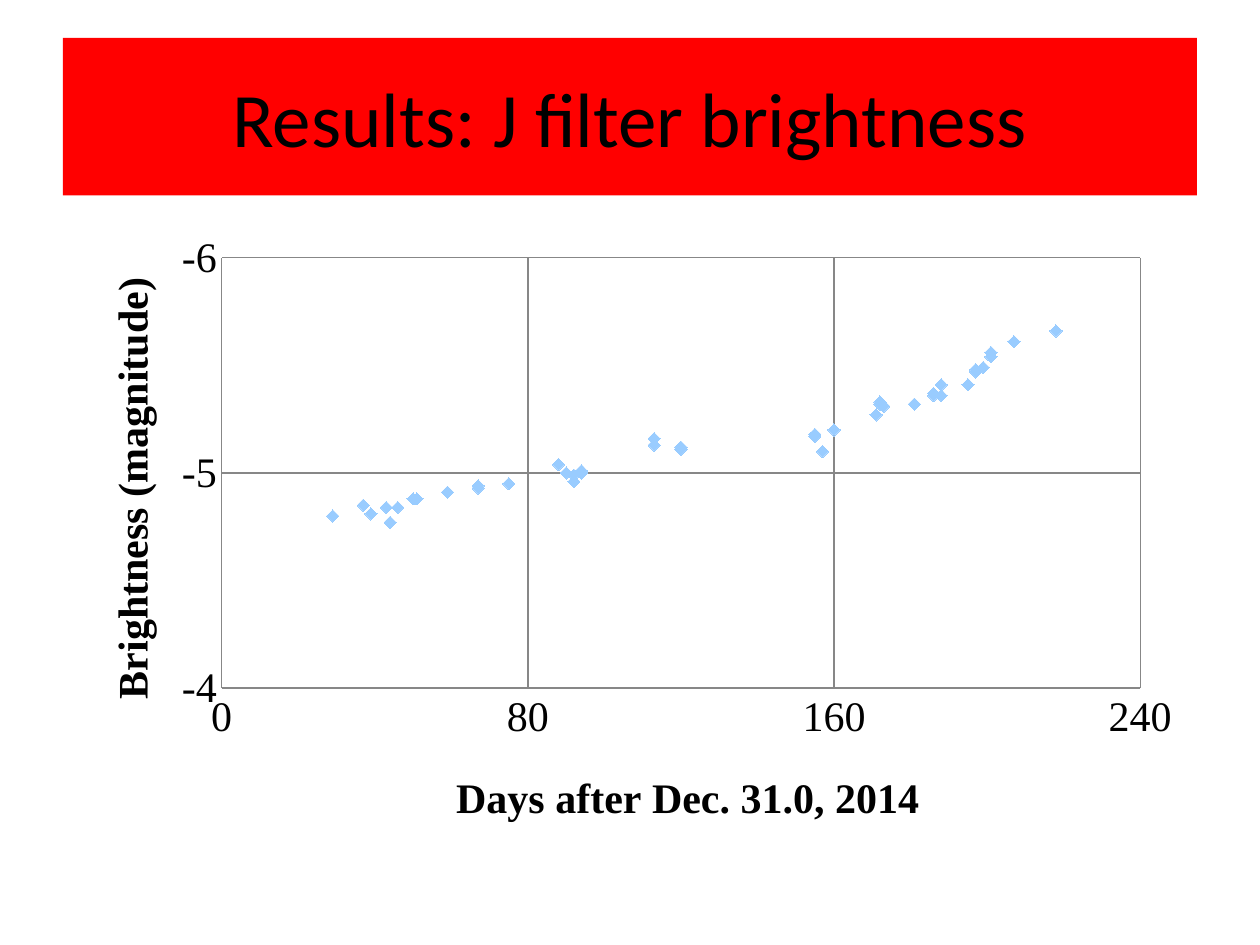
from lxml import etree
from pptx import Presentation
from pptx.chart.data import XyChartData
from pptx.dml.color import RGBColor
from pptx.enum.chart import (XL_AXIS_CROSSES, XL_CHART_TYPE, XL_MARKER_STYLE,
                             XL_TICK_MARK)
from pptx.enum.shapes import MSO_SHAPE
from pptx.enum.text import MSO_ANCHOR, PP_ALIGN
from pptx.oxml.ns import qn
from pptx.util import Inches, Pt

SCATTER = XL_CHART_TYPE.XY_SCATTER
DIAMOND = XL_MARKER_STYLE.DIAMOND
NO_TICK = XL_TICK_MARK.NONE
CROSS_MAX = XL_AXIS_CROSSES.MAXIMUM
RECT = MSO_SHAPE.RECTANGLE
MIDDLE = MSO_ANCHOR.MIDDLE
CENTER = PP_ALIGN.CENTER

COLORS = {"banner": "FF0000", "text": "000000", "grid": "878787", "marker": "99CCFF"}
TITLE_FONT = "Calibri"
AXIS_FONT = "Times New Roman"

DAYS = [29, 37, 39, 43, 44, 46, 50, 51, 59, 67, 67, 75, 88, 90, 92, 92, 94, 94,
        113, 113, 120, 120, 155, 155, 157, 160, 171, 172, 172, 173, 181, 181,
        186, 186, 186, 188, 188, 195, 197, 197, 199, 201, 201, 207, 218]
MAGNITUDES = [-4.8, -4.85, -4.81, -4.84, -4.77, -4.84, -4.88, -4.88, -4.91,
              -4.93, -4.94, -4.95, -5.04, -5, -4.96, -4.99, -5.01, -5, -5.16,
              -5.13, -5.11, -5.12, -5.18, -5.17, -5.1, -5.2, -5.27, -5.33,
              -5.32, -5.31, -5.32, -5.32, -5.37, -5.36, -5.36, -5.41, -5.36,
              -5.41, -5.47, -5.48, -5.49, -5.54, -5.56, -5.61, -5.66]


def rgb(name):
    return RGBColor.from_string(COLORS[name])


def style_font(font, name, size, bold=False):
    font.name, font.size, font.bold = name, Pt(size), bold
    font.color.rgb = rgb("text")


def set_layout(parent, index, inner=False, **fractions):
    """Place a chart part by fractions of the chart area."""
    for old in parent.findall(qn("c:layout")):
        parent.remove(old)
    layout = etree.Element(qn("c:layout"))
    manual = etree.SubElement(layout, qn("c:manualLayout"))
    if inner:
        etree.SubElement(manual, qn("c:layoutTarget")).set("val", "inner")
    for key in ("x", "y"):
        etree.SubElement(manual, qn(f"c:{key}Mode")).set("val", "edge")
    for key, value in fractions.items():
        etree.SubElement(manual, qn(f"c:{key}")).set("val", str(value))
    parent.insert(index, layout)


def add_banner(s, text, x, y, w, h):
    sp = s.shapes.add_shape(RECT, x, y, w, h)
    sp.shadow.inherit = False
    sp.fill.solid()
    sp.fill.fore_color.rgb = rgb("banner")
    sp.line.fill.background()
    tf = sp.text_frame
    tf.text = text
    tf.word_wrap = True
    tf.vertical_anchor = MIDDLE
    p = tf.paragraphs[0]
    p.alignment = CENTER
    style_font(p.runs[0].font, TITLE_FONT, 44)


def style_axis(axis, title, low, high, step, title_x, title_y):
    axis.minimum_scale, axis.maximum_scale, axis.major_unit = low, high, step
    axis.major_tick_mark = axis.minor_tick_mark = NO_TICK
    axis.has_major_gridlines = True
    for line in (axis.format.line, axis.major_gridlines.format.line):
        line.color.rgb = rgb("grid")
        line.width = Pt(0.75)
    axis.tick_labels.number_format = "General"
    axis.tick_labels.number_format_is_linked = False
    style_font(axis.tick_labels.font, AXIS_FONT, 24)
    tf = axis.axis_title.text_frame
    tf.text = title
    style_font(tf.paragraphs[0].runs[0].font, AXIS_FONT, 24, bold=True)
    set_layout(axis.axis_title._element, 1, x=title_x, y=title_y)


def add_brightness_chart(s, x, y, w, h):
    data = XyChartData()
    points = data.add_series("Series 1")
    for day, magnitude in zip(DAYS, MAGNITUDES):
        points.add_data_point(day, magnitude)
    chart = s.shapes.add_chart(SCATTER, x, y, w, h, data).chart
    chart.has_legend = False
    chart.has_title = False
    style_font(chart.font, TITLE_FONT, 10)
    style_axis(chart.category_axis, "Days after Dec. 31.0, 2014", 0, 240, 80, 0.34, 0.87)
    style_axis(chart.value_axis, "Brightness (magnitude)", -6, -4, 1, 0.03, 0.08)
    chart.value_axis.reverse_order = True
    chart.value_axis.crosses = CROSS_MAX
    plot_area = chart._chartSpace.find(".//" + qn("c:plotArea"))
    set_layout(plot_area, 0, inner=True, x=0.14, y=0.06, w=0.81, h=0.69)

    plot = chart.plots[0]
    plot.vary_by_categories = False
    series = plot.series[0]
    series.format.line.fill.background()
    marker = series.marker
    marker.style, marker.size = DIAMOND, 7
    marker.format.fill.solid()
    marker.format.fill.fore_color.rgb = rgb("marker")
    marker.format.line.fill.background()


def main():
    prs = Presentation()
    prs.slide_width, prs.slide_height = Inches(10), Inches(7.5)
    s = prs.slides.add_slide(prs.slide_layouts[6])
    left, width = Inches(0.5), Inches(9)
    add_banner(s, "Results: J filter brightness", left, Inches(0.3), width, Inches(1.25))
    add_brightness_chart(s, left, Inches(1.75), width, Inches(4.95))
    prs.save("out.pptx")


if __name__ == "__main__":
    main()
